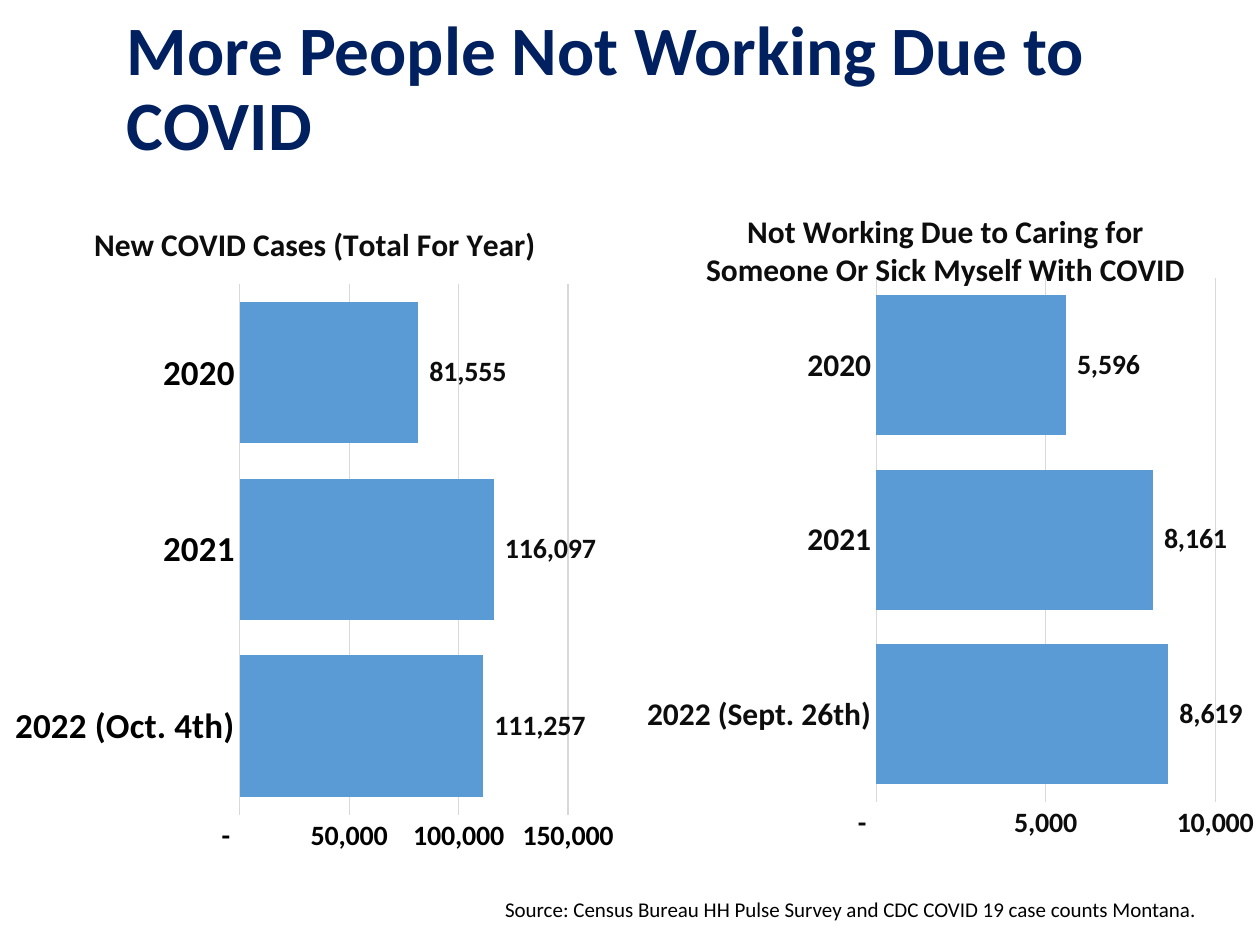
"""Build a slide with two bar charts on COVID cases and people not working due to COVID."""
import lxml.etree
import pptx
import pptx.chart.data
import pptx.dml.color
import pptx.enum.chart
import pptx.enum.text
import pptx.oxml.ns
import pptx.util

Inches = pptx.util.Inches
Pt = pptx.util.Pt
qn = pptx.oxml.ns.qn

THEME = {
    "font": "Calibri",
    "navy": "002060", "bar": "5B9BD5", "grid": "D9D9D9", "ink": "0D0D0D", "black": "000000",
    "headline": 39.6, "chart_title": 18, "value": 16, "source": 12, "base": 10,
}
NUMBER_FORMAT = '_(* #,##0_);_(* \\(#,##0\\);_(* "-"??_);_('


def style_font(font, size, color, bold=True):
    settings = {"name": THEME["font"], "size": Pt(size), "bold": bold}
    for attribute, value in settings.items():
        setattr(font, attribute, value)
    font.color.rgb = pptx.dml.color.RGBColor.from_string(THEME[color])


def place(parent, index, **settings):
    for previous in parent.findall(qn("c:layout")):
        parent.remove(previous)
    layout = lxml.etree.SubElement(parent, qn("c:layout"))
    parent.insert(index, layout)
    manual = lxml.etree.SubElement(layout, qn("c:manualLayout"))
    for tag, value in settings.items():
        lxml.etree.SubElement(manual, qn(f"c:{tag}")).set("val", str(value))


presentation = pptx.Presentation()
presentation.slide_width = Inches(10)
presentation.slide_height = Inches(7.5)
slide = presentation.slides.add_slide(presentation.slide_layouts[6])

headline = slide.shapes.add_textbox(Inches(0.91), Inches(0.15), Inches(8.94), Inches(1.14)).text_frame
headline.word_wrap = True
headline.vertical_anchor = pptx.enum.text.MSO_ANCHOR.MIDDLE
headline.text = "More People Not Working Due to COVID"
headline.paragraphs[0].line_spacing = 0.9
style_font(headline.paragraphs[0].runs[0].font, THEME["headline"], "navy")

panels = [
    {
        "title": "New COVID Cases (Total For Year)", "title_at": (0.14, 0.04),
        "box": (0, 1.51, 5.01, 5.33), "plot": (0.38, 0.14, 0.52, 0.79),
        "categories": ["2022 (Oct. 4th)", "2021", "2020"], "values": [111257, 116097, 81555],
        "maximum": 150000, "step": 50000, "category_size": 20, "axis_color": "black",
    },
    {
        "title": "Not Working Due to Caring for Someone Or Sick Myself With COVID", "title_at": (0.11, 0.03),
        "box": (5.01, 1.46, 4.99, 5.33), "plot": (0.39, 0.14, 0.54, 0.78),
        "categories": ["2022 (Sept. 26th)", "2021", "2020"], "values": [8619, 8161, 5596],
        "maximum": 10000, "step": 5000, "category_size": 18, "axis_color": "ink",
    },
]

for panel in panels:
    data = pptx.chart.data.CategoryChartData(number_format=NUMBER_FORMAT)
    data.categories = panel["categories"]
    data.add_series("Series 1", panel["values"])
    chart = slide.shapes.add_chart(
        pptx.enum.chart.XL_CHART_TYPE.BAR_CLUSTERED, *map(Inches, panel["box"]), data
    ).chart
    chart.has_legend = False
    style_font(chart.font, THEME["base"], "black", bold=False)

    chart.has_title = True
    chart.chart_title.text_frame.text = panel["title"]
    style_font(chart.chart_title.text_frame.paragraphs[0].runs[0].font, THEME["chart_title"], "ink")
    title_x, title_y = panel["title_at"]
    chart_title = chart.element.find(".//" + qn("c:title"))
    place(chart_title, 1, xMode="edge", yMode="edge", x=title_x, y=title_y)

    plot_area = chart.element.find(".//" + qn("c:plotArea"))
    x, y, w, h = panel["plot"]
    place(plot_area, 0, layoutTarget="inner", xMode="edge", yMode="edge", x=x, y=y, w=w, h=h)

    for axis, size in ((chart.category_axis, panel["category_size"]), (chart.value_axis, THEME["value"])):
        axis.major_tick_mark = pptx.enum.chart.XL_TICK_MARK.NONE
        axis.minor_tick_mark = pptx.enum.chart.XL_TICK_MARK.NONE
        style_font(axis.tick_labels.font, size, panel["axis_color"])

    value_axis = chart.value_axis
    scale = {"minimum_scale": 0, "maximum_scale": panel["maximum"], "major_unit": panel["step"],
             "has_major_gridlines": True}
    for attribute, value in scale.items():
        setattr(value_axis, attribute, value)
    value_axis.tick_labels.number_format = NUMBER_FORMAT
    value_axis.tick_labels.number_format_is_linked = False
    value_axis.format.line.fill.background()
    for line in (chart.category_axis.format.line, value_axis.major_gridlines.format.line):
        line.width = Pt(0.75)
        line.color.rgb = pptx.dml.color.RGBColor.from_string(THEME["grid"])

    bars = chart.plots[0]
    bars.gap_width = 25
    bars.vary_by_categories = False
    bar_fill = bars.series[0].format.fill
    bar_fill.solid()
    bar_fill.fore_color.rgb = pptx.dml.color.RGBColor.from_string(THEME["bar"])
    labels = bars.series[0].data_labels
    label_settings = {
        "show_value": True, "number_format": NUMBER_FORMAT, "number_format_is_linked": False,
        "position": pptx.enum.chart.XL_LABEL_POSITION.OUTSIDE_END,
    }
    for attribute, value in label_settings.items():
        setattr(labels, attribute, value)
    style_font(labels.font, THEME["value"], "ink")

source = slide.shapes.add_textbox(Inches(3.91), Inches(7.07), Inches(5.71), Inches(0.3)).text_frame
source.word_wrap = False
source.auto_size = pptx.enum.text.MSO_AUTO_SIZE.SHAPE_TO_FIT_TEXT
source.text = "Source: Census Bureau HH Pulse Survey and CDC COVID 19 case counts Montana."
style_font(source.paragraphs[0].runs[0].font, THEME["source"], "black", bold=False)

presentation.save("out.pptx")
